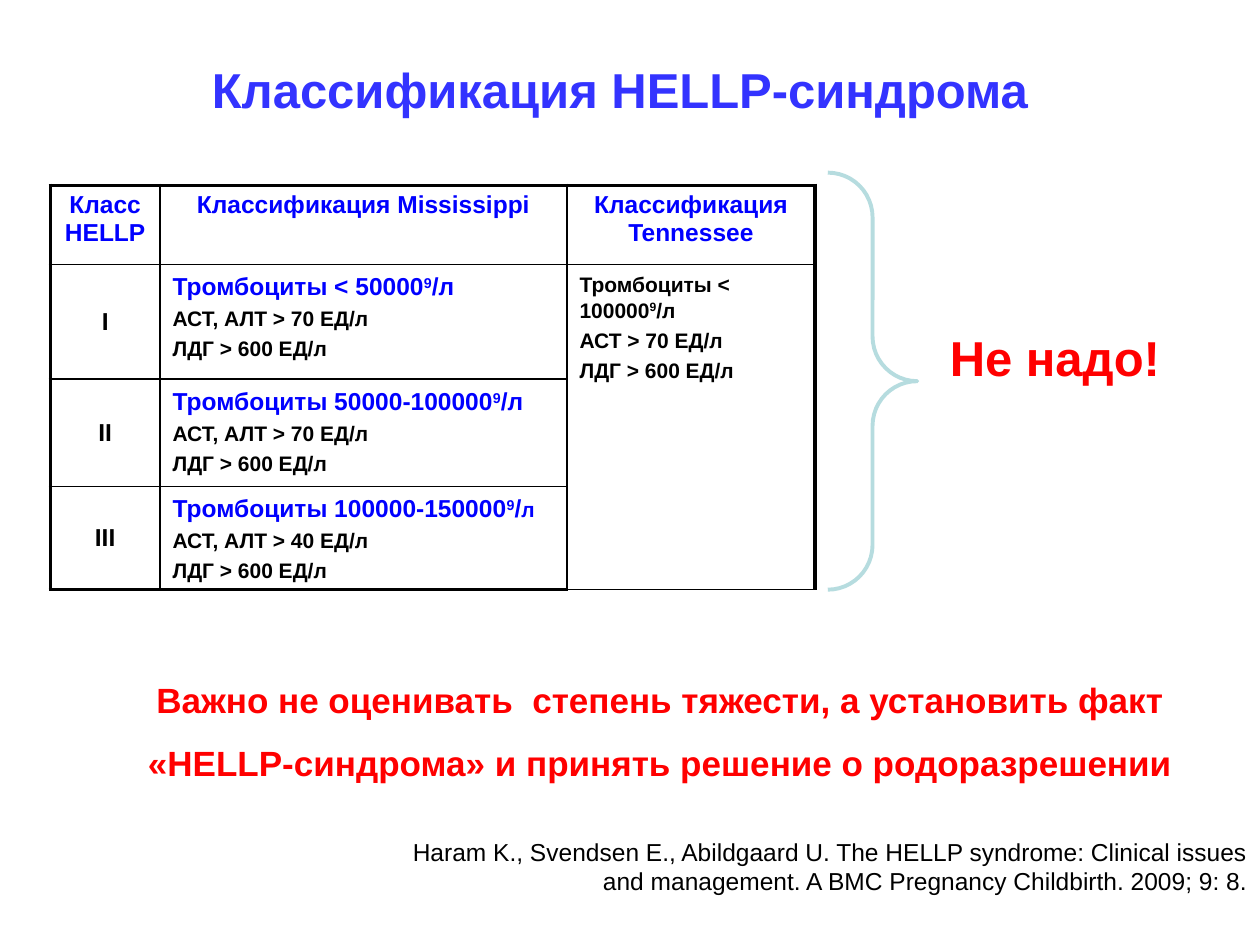
from lxml import etree
from pptx import Presentation
from pptx import util as u
from pptx.dml.color import RGBColor
from pptx.enum import shapes, text
from pptx.oxml.ns import qn

BLACK = RGBColor(0x00, 0x00, 0x00)
BLUE = RGBColor(0x00, 0x00, 0xFF)
TITLE_BLUE = RGBColor(0x33, 0x33, 0xFF)
RED = RGBColor(0xFF, 0x00, 0x00)
TEAL = RGBColor(0xB6, 0xDC, 0xDF)
FONT = "Arial"
OUTER, INNER = 2.25, 1
LEFT, CENTER, RIGHT = text.PP_ALIGN.LEFT, text.PP_ALIGN.CENTER, text.PP_ALIGN.RIGHT
TOP, MIDDLE = text.MSO_ANCHOR.TOP, text.MSO_ANCHOR.MIDDLE

LABELS = [
    ("Классификация HELLP-синдрома", (0.67, 0.36, 8.5, 0.69), 28, TITLE_BLUE, True, CENTER, 1, MIDDLE),
    ("Haram K., Svendsen E., Abildgaard U. The HELLP syndrome: Clinical issues and management. "
     "A BMC Pregnancy Childbirth. 2009; 9: 8.", (2.91, 6.59, 7.09, 0.91), 14, BLACK, False, RIGHT, 1, TOP),
    ("Важно не оценивать  степень тяжести, а установить факт «HELLP-синдрома» "
     "и принять решение о родоразрешении", (0.91, 5.17, 8.66, 1.05), 20, RED, True, CENTER, 1.5, TOP),
    ("Не надо!", (7.44, 2.55, 2.2, 0.57), 28, RED, True, LEFT, 1, TOP),
]

HEADERS = ["Класс HELLP", "Классификация Mississippi", "Классификация Tennessee"]
CLASSES = [
    ("I", "< 50000", [("/л", 14)], 70),
    ("II", "50000-100000", [("/л", 14)], 70),
    ("III", "100000-150000", [("/", 14), ("л", 12)], 40),
]
TENNESSEE = ("< 100000", [("/л", 12)], "АСТ > 70 ЕД/л")
TABLE_AT = (0.4, 1.47)
COLUMNS = [0.87, 3.23, 1.97]
ROWS = [0.63, 0.91, 0.85, 0.81]
BRACE_AT = (6.57, 1.37, 0.71, 3.31)


def style(span, size, color, bold=True):
    span.font.name = FONT
    span.font.size = u.Pt(size)
    span.font.bold = bold
    span.font.color.rgb = color


def add_label(page, words, place, size, color, bold, align, spacing, anchor):
    box = page.shapes.add_textbox(*map(u.Inches, place))
    frame = box.text_frame
    frame.word_wrap = True
    frame.vertical_anchor = anchor
    frame.text = words
    para = frame.paragraphs[0]
    para.alignment = align
    para.line_spacing = spacing
    style(para.runs[0], size, color, bold)


def fill_title(cell, words, color, anchor):
    cell.text_frame.text = words
    cell.vertical_anchor = anchor
    para = cell.text_frame.paragraphs[0]
    para.alignment = CENTER
    style(para.runs[0], 14, color)


def fill_criteria(cell, count, unit, enzymes, size, color):
    frame = cell.text_frame
    frame.text = f"Тромбоциты {count}"
    first = frame.paragraphs[0]
    style(first.runs[0], size, color)
    for words, part_size in [("9", size)] + unit:
        span = first.add_run()
        span.text = words
        style(span, part_size, color)
    first.runs[1].font._element.set("baseline", "30000")
    for words in (enzymes, "ЛДГ > 600 ЕД/л"):
        para = frame.add_paragraph()
        para.text = words
        para.space_before = u.Pt(2.4)
        style(para.runs[0], 12, BLACK)
    for para in frame.paragraphs:
        para.line_spacing = 1.1


def draw_borders(cell, widths):
    properties = cell._tc.get_or_add_tcPr()
    for side, width in zip("LRTB", widths):
        line = etree.SubElement(properties, qn(f"a:ln{side}"), w=str(int(u.Pt(width))))
        solid = etree.SubElement(line, qn("a:solidFill"))
        etree.SubElement(solid, qn("a:srgbClr"), val=str(BLACK))


def add_classification(page):
    size = map(u.Inches, (*TABLE_AT, sum(COLUMNS), sum(ROWS)))
    table = page.shapes.add_table(len(ROWS), len(COLUMNS), *size).table
    for column, width in zip(table.columns, COLUMNS):
        column.width = u.Inches(width)
    for row, height in zip(table.rows, ROWS):
        row.height = u.Inches(height)
    last_row, last_column = len(ROWS) - 1, len(COLUMNS) - 1
    for r in range(len(ROWS)):
        for c in range(len(COLUMNS)):
            cell = table.cell(r, c)
            edges = (c == 0, c == last_column, r == 0, r == last_row)
            draw_borders(cell, [OUTER if edge else INNER for edge in edges])
            cell.fill.background()
    table.cell(1, last_column).merge(table.cell(last_row, last_column))
    for c, words in enumerate(HEADERS):
        fill_title(table.cell(0, c), words, BLUE, TOP)
    for r, (name, count, unit, level) in enumerate(CLASSES, 1):
        fill_title(table.cell(r, 0), name, BLACK, MIDDLE)
        fill_criteria(table.cell(r, 1), count, unit, f"АСТ, АЛТ > {level} ЕД/л", 14, BLUE)
    fill_criteria(table.cell(1, last_column), *TENNESSEE, 12, BLACK)


def add_brace(page):
    brace = page.shapes.add_shape(shapes.MSO_SHAPE.RIGHT_BRACE, *map(u.Inches, BRACE_AT))
    brace.adjustments[0] = 0.5
    brace.adjustments[1] = 0.5
    brace.shadow.inherit = False
    brace.fill.background()
    brace.line.color.rgb = TEAL
    brace.line.width = u.Pt(2.25)


def main():
    deck = Presentation()
    deck.slide_width, deck.slide_height = u.Inches(10), u.Inches(7.5)
    page = deck.slides.add_slide(deck.slide_layouts[6])
    add_classification(page)
    for label in LABELS:
        add_label(page, *label)
    add_brace(page)
    deck.save("out.pptx")


if __name__ == "__main__":
    main()
